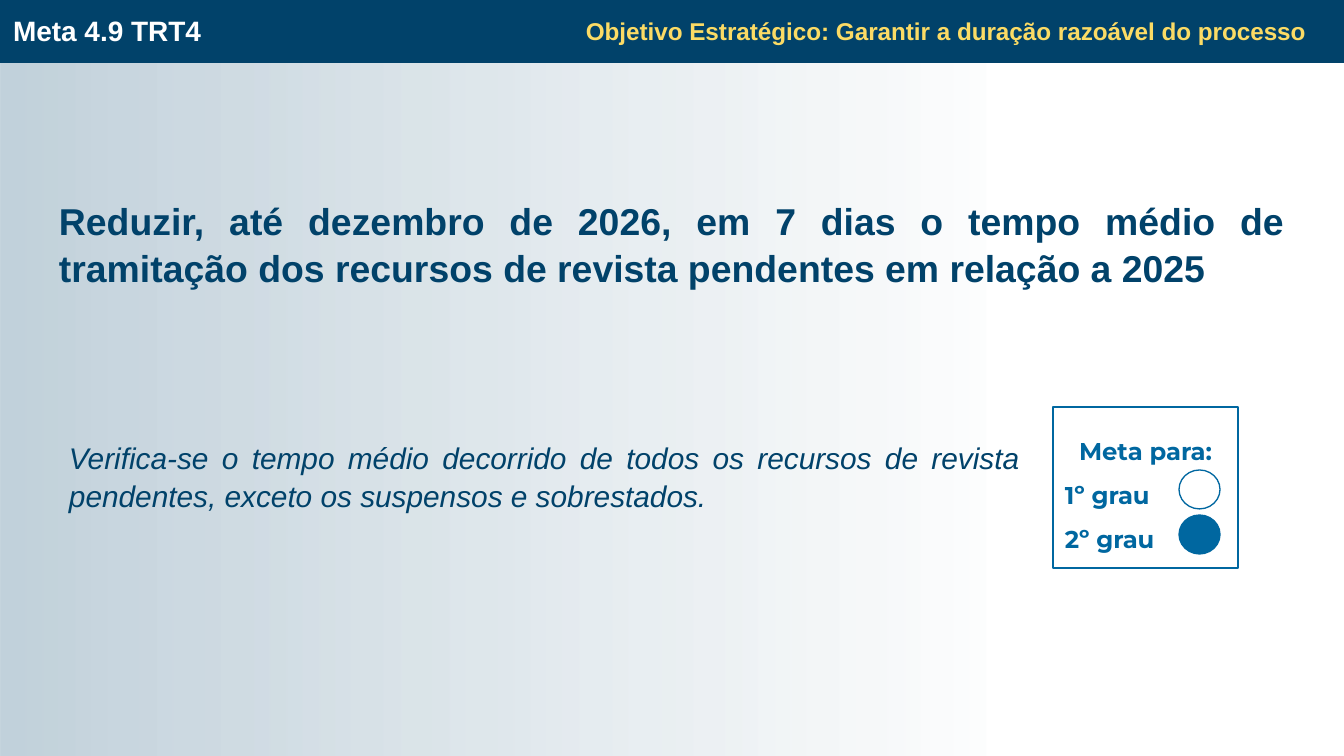
from typing import NamedTuple, Optional

from lxml import etree
from pptx import Presentation
from pptx import util as u
from pptx.dml import color
from pptx.enum import shapes, text
from pptx.oxml import ns

SCALE = u.Inches(10) / 1344
COLORS = {
    "navy": "01426A",
    "blue": "0067A0",
    "yellow": "FBDB65",
    "white": "FFFFFF",
}
ALIGN = text.PP_ALIGN
ANCHOR = text.MSO_ANCHOR
KIND = shapes.MSO_SHAPE


class Area(NamedTuple):
    left: int
    top: int
    width: int
    height: int


class TextBlock(NamedTuple):
    area: Area
    content: str
    size: int
    color: str
    align: ALIGN = ALIGN.LEFT
    anchor: ANCHOR = ANCHOR.MIDDLE
    bold: bool = True
    italic: bool = False
    spacing: float = 1.0
    insets: tuple = (13, 13, 13, 13)


class Panel(NamedTuple):
    area: Area
    kind: KIND
    fill: str
    line: Optional[str] = None


def px(length: int) -> int:
    return round(length * SCALE)


def rgb(name: str) -> color.RGBColor:
    return color.RGBColor.from_string(COLORS[name])


def set_alpha(color_element, percent: int) -> None:
    alpha = etree.SubElement(color_element, ns.qn("a:alpha"))
    alpha.set("val", str(percent * 1000))


def add_panel(parent, panel: Panel):
    shape = parent.add_shape(panel.kind, *map(px, panel.area))
    shape.shadow.inherit = False
    shape.fill.solid()
    shape.fill.fore_color.rgb = rgb(panel.fill)
    if panel.line:
        shape.line.color.rgb = rgb(panel.line)
        shape.line.width = u.Pt(0.7)
    else:
        shape.line.fill.background()
    return shape


def fade_to_right(shape, name: str, stops: list[tuple[int, int]]) -> None:
    shape.fill.gradient()
    shape.fill.gradient_angle = 0
    stop_list = shape._element.spPr.find(".//" + ns.qn("a:gsLst"))
    for stop in list(stop_list):
        stop_list.remove(stop)
    for position, opacity in stops:
        stop = etree.SubElement(stop_list, ns.qn("a:gs"), pos=str(position * 1000))
        tint = etree.SubElement(stop, ns.qn("a:srgbClr"), val=COLORS[name])
        set_alpha(tint, opacity)


def set_frame(frame, insets: tuple, anchor: ANCHOR) -> None:
    frame.word_wrap = True
    frame.vertical_anchor = anchor
    frame.margin_left, frame.margin_top, frame.margin_right, frame.margin_bottom = map(px, insets)


def write(para, content: str, *, size: int, color_name: str, font: str = "Arial",
          bold: bool = True, italic: bool = False, align: ALIGN = ALIGN.LEFT,
          spacing: float = 1.0) -> None:
    para.alignment = align
    para.line_spacing = spacing
    span = para.add_run()
    span.text = content
    span.font.name = font
    span.font.size = u.Pt(size)
    span.font.bold = bold
    span.font.italic = italic
    span.font.color.rgb = rgb(color_name)


def add_text(page, block: TextBlock) -> None:
    box = page.shapes.add_textbox(*map(px, block.area))
    set_frame(box.text_frame, block.insets, block.anchor)
    write(box.text_frame.paragraphs[0], block.content, size=block.size,
          color_name=block.color, bold=block.bold, italic=block.italic,
          align=block.align, spacing=block.spacing)


def add_scope_card(page) -> None:
    group = page.shapes.add_group_shape().shapes
    card = add_panel(group, Panel(Area(1053, 407, 185, 161), KIND.RECTANGLE, "white", "blue"))
    set_alpha(card._element.spPr.find(ns.qn("a:solidFill"))[0], 65)
    frame = card.text_frame
    set_frame(frame, (12, 12, 12, 12), ANCHOR.MIDDLE)
    for index, label in enumerate(["Meta para:", "1º grau", "2º grau"]):
        para = frame.add_paragraph() if index else frame.paragraphs[0]
        write(para, label, size=13, color_name="blue", font="Montserrat",
              align=ALIGN.LEFT if index else ALIGN.CENTER, spacing=1.5)
    for row, fill in enumerate(["white", "blue"]):
        area = Area(1179, 470 + 45 * row, 41, 39)
        add_panel(group, Panel(area, KIND.OVAL, fill, "blue"))


TEXTS = [
    TextBlock(Area(46, 183, 1252, 188),
              "Reduzir, até dezembro de 2026, em 7 dias o tempo médio de tramitação "
              "dos recursos de revista pendentes em relação a 2025",
              20, "navy", ALIGN.JUSTIFY, ANCHOR.TOP, spacing=1.05),
    TextBlock(Area(0, 7, 546, 47), "Meta 4.9 TRT4", 15, "white"),
    TextBlock(Area(287, 2, 1031, 58),
              "Objetivo Estratégico: Garantir a duração razoável do processo",
              13, "yellow", ALIGN.RIGHT),
    TextBlock(Area(58, 425, 962, 129),
              "Verifica-se o tempo médio decorrido de todos os recursos de revista "
              "pendentes, exceto os suspensos e sobrestados.",
              16, "navy", ALIGN.JUSTIFY, ANCHOR.TOP, bold=False, italic=True,
              spacing=1.05, insets=(11, 13, 0, 13)),
]


def main() -> None:
    deck = Presentation()
    deck.slide_width, deck.slide_height = px(1344), px(756)
    page = deck.slides.add_slide(deck.slide_layouts[6])
    backdrop = add_panel(page.shapes, Panel(Area(0, 0, 1344, 756), KIND.RECTANGLE, "navy"))
    fade_to_right(backdrop, "navy", [(0, 24), (74, 0), (100, 0)])
    add_panel(page.shapes, Panel(Area(0, 0, 1344, 63), KIND.RECTANGLE, "navy"))
    for block in TEXTS:
        add_text(page, block)
    add_scope_card(page)
    deck.save("out.pptx")


if __name__ == "__main__":
    main()
